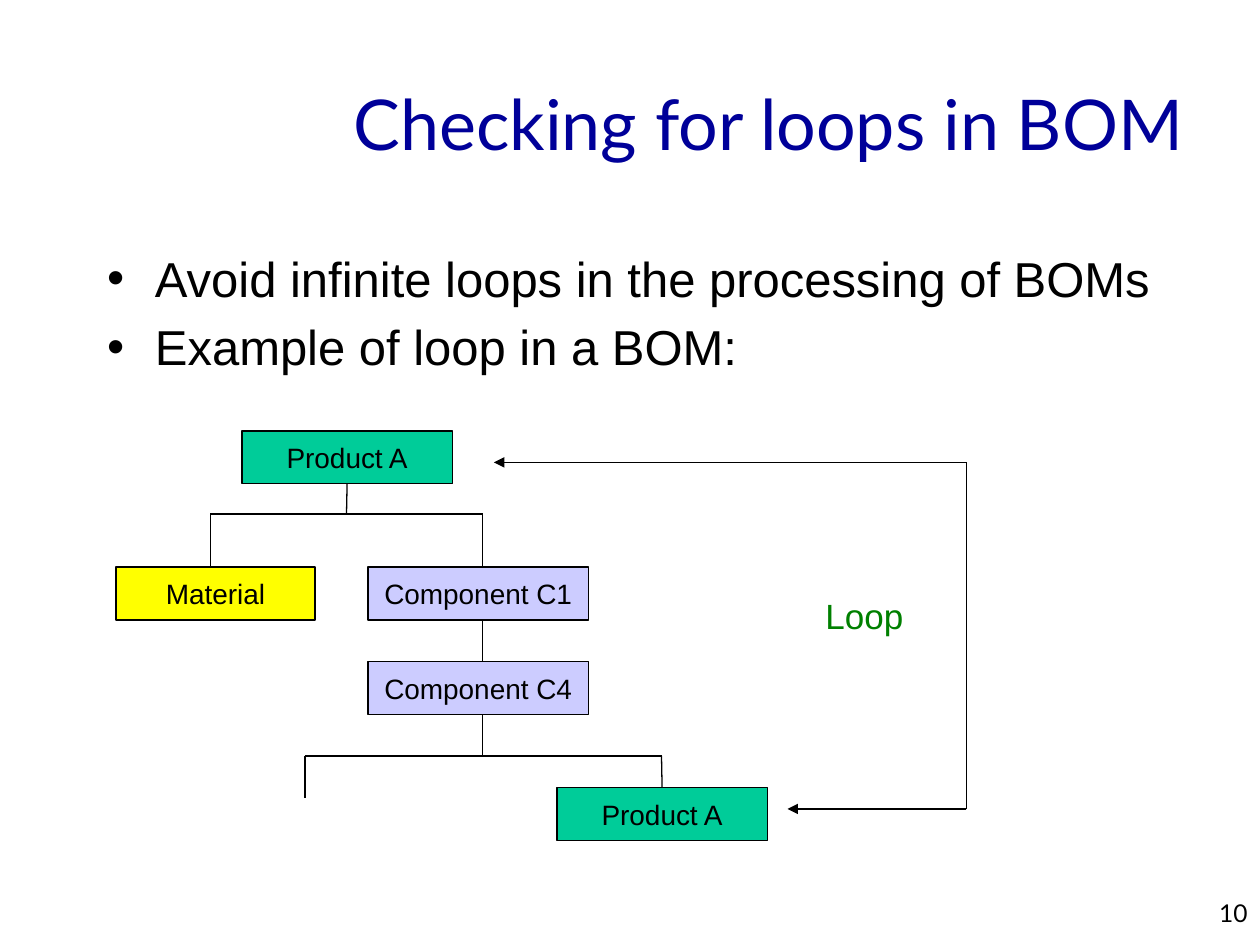
from dataclasses import dataclass
from typing import Optional

from lxml import etree
from pptx import Presentation
from pptx.dml.color import RGBColor
from pptx.enum.shapes import MSO_CONNECTOR, MSO_SHAPE
from pptx.enum.text import MSO_ANCHOR, MSO_AUTO_SIZE, PP_ALIGN
from pptx.oxml.ns import qn
from pptx.util import Inches, Pt

STRAIGHT = MSO_CONNECTOR.STRAIGHT
RECTANGLE = MSO_SHAPE.RECTANGLE
TOP, MIDDLE = MSO_ANCHOR.TOP, MSO_ANCHOR.MIDDLE
LEFT, CENTER, RIGHT = PP_ALIGN.LEFT, PP_ALIGN.CENTER, PP_ALIGN.RIGHT
NO_FIT = MSO_AUTO_SIZE.NONE
TOP_SIDE, BOTTOM_SIDE = 0, 2

COLORS = {
    "title": "000099",
    "text": "000000",
    "line": "000000",
    "product": "00CC99",
    "material": "FFFF00",
    "component": "CCCCFF",
    "loop": "008000",
}
LINE_WIDTH = Pt(0.75)
BOX_HEIGHT = 0.42


@dataclass(frozen=True)
class Node:
    name: str
    text: str
    kind: str
    left: float
    top: float
    width: float


@dataclass(frozen=True)
class Link:
    """A straight line; from_node and to_node name the boxes it is joined to."""
    start: tuple[float, float]
    end: tuple[float, float]
    arrow: bool = False
    from_node: Optional[str] = None
    to_node: Optional[str] = None


NODES = [
    Node("parent", "Product A", "product", 1.92, 3.42, 1.67),
    Node("material", "Material", "material", 0.92, 4.5, 1.58),
    Node("c1", "Component C1", "component", 2.92, 4.5, 1.75),
    Node("c4", "Component C4", "component", 2.92, 5.25, 1.75),
    Node("repeat", "Product A", "product", 4.42, 6.25, 1.67),
]

PARENT_X, MATERIAL_X, COMPONENT_X = 2.75, 1.67, 3.83
OPEN_X, REPEAT_X, LOOP_X = 2.42, 5.25, 7.67
UPPER_Y, LOWER_Y = 4.08, 6
LOOP_TOP, LOOP_BOTTOM = 3.67, 6.42

LINKS = [
    Link((PARENT_X, 3.83), (PARENT_X, UPPER_Y), from_node="parent"),
    Link((MATERIAL_X, UPPER_Y), (COMPONENT_X, UPPER_Y)),
    Link((MATERIAL_X, UPPER_Y), (MATERIAL_X, 4.5)),
    Link((COMPONENT_X, UPPER_Y), (COMPONENT_X, 4.5)),
    Link((COMPONENT_X, 4.92), (COMPONENT_X, 5.25)),
    Link((COMPONENT_X, 5.67), (COMPONENT_X, LOWER_Y)),
    Link((OPEN_X, LOWER_Y), (REPEAT_X, LOWER_Y)),
    Link((OPEN_X, LOWER_Y), (OPEN_X, 6.33)),
    Link((REPEAT_X, LOWER_Y), (REPEAT_X, 6.25), to_node="repeat"),
    Link((LOOP_X, LOOP_TOP), (3.92, LOOP_TOP), arrow=True),
    Link((LOOP_X, LOOP_BOTTOM), (6.25, LOOP_BOTTOM), arrow=True),
    Link((LOOP_X, LOOP_TOP), (LOOP_X, LOOP_BOTTOM)),
]


def rgb(name: str) -> RGBColor:
    return RGBColor.from_string(COLORS[name])


def place(shape, left: float, top: float, width: float, height: float) -> None:
    bounds = {"left": left, "top": top, "width": width, "height": height}
    for key, value in bounds.items():
        setattr(shape, key, Inches(value))


def write(shape, lines: list[str], size: float, font: str = "Arial",
          color: str = "text", align=CENTER, anchor=MIDDLE, wrap: bool = True) -> None:
    """Fill a shape with one formatted paragraph for each line."""
    frame = shape.text_frame
    frame.text = "\n".join(lines)
    frame_format = {"auto_size": NO_FIT, "word_wrap": wrap, "vertical_anchor": anchor}
    for key, value in frame_format.items():
        setattr(frame, key, value)
    for para in frame.paragraphs:
        para.alignment = align
        for span in para.runs:
            for key, value in {"size": Pt(size), "name": font}.items():
                setattr(span.font, key, value)
            span.font.color.rgb = rgb(color)


def add_bullets(shape) -> None:
    for para in shape.text_frame.paragraphs:
        properties = para._p.get_or_add_pPr()
        properties.set("marL", str(Inches(0.38)))
        properties.set("indent", str(Inches(-0.38)))
        spacing = etree.SubElement(properties, qn("a:spcBef"))
        etree.SubElement(spacing, qn("a:spcPct"), val="20000")
        etree.SubElement(properties, qn("a:buChar"), char="•")


def add_node(slide, node: Node):
    box = slide.shapes.add_shape(
        RECTANGLE, Inches(node.left), Inches(node.top),
        Inches(node.width), Inches(BOX_HEIGHT))
    box.shadow.inherit = False
    box.fill.solid()
    box.fill.fore_color.rgb = rgb(node.kind)
    box.line.color.rgb = rgb("line")
    box.line.width = LINE_WIDTH
    write(box, [node.text], 16, wrap=False)
    return box


def add_link(slide, link: Link, boxes: dict) -> None:
    ends = [Inches(value) for value in link.start + link.end]
    connector = slide.shapes.add_connector(STRAIGHT, *ends)
    connector.line.color.rgb = rgb("line")
    connector.line.width = LINE_WIDTH
    if link.arrow:
        etree.SubElement(connector.line._get_or_add_ln(), qn("a:tailEnd"), type="triangle")
    etree.SubElement(connector._element.spPr, qn("a:effectLst"))
    if link.from_node:
        connector.begin_connect(boxes[link.from_node], BOTTOM_SIDE)
    if link.to_node:
        connector.end_connect(boxes[link.to_node], TOP_SIDE)


def add_label(slide, bounds: tuple[float, float, float, float], text: str,
              size: float, **text_format) -> None:
    box = slide.shapes.add_textbox(*[Inches(value) for value in bounds])
    write(box, [text], size, **text_format)


def main() -> None:
    deck = Presentation()
    deck.slide_width, deck.slide_height = Inches(10), Inches(7.5)
    slide = deck.slides.add_slide(deck.slide_layouts[1])

    title, body = slide.shapes.title, slide.placeholders[1]
    place(title, 0.17, 0.52, 9.32, 0.9)
    write(title, ["Checking for loops in BOM"], 40, "Lato", "title", RIGHT)
    place(body, 0.75, 1.92, 8.5, 1.62)
    write(body, ["Avoid infinite loops in the processing of BOMs",
                 "Example of loop in a BOM:"], 28, align=LEFT, anchor=TOP)
    add_bullets(body)

    boxes = {node.name: add_node(slide, node) for node in NODES}
    for link in LINKS:
        add_link(slide, link, boxes)

    add_label(slide, (6.45, 4.67, 0.82, 0.43), "Loop", 20, color="loop", wrap=False)
    add_label(slide, (7.92, 7.08, 2.08, 0.25), "10", 14, font="Lato",
              align=RIGHT, anchor=TOP)
    deck.save("out.pptx")


if __name__ == "__main__":
    main()
